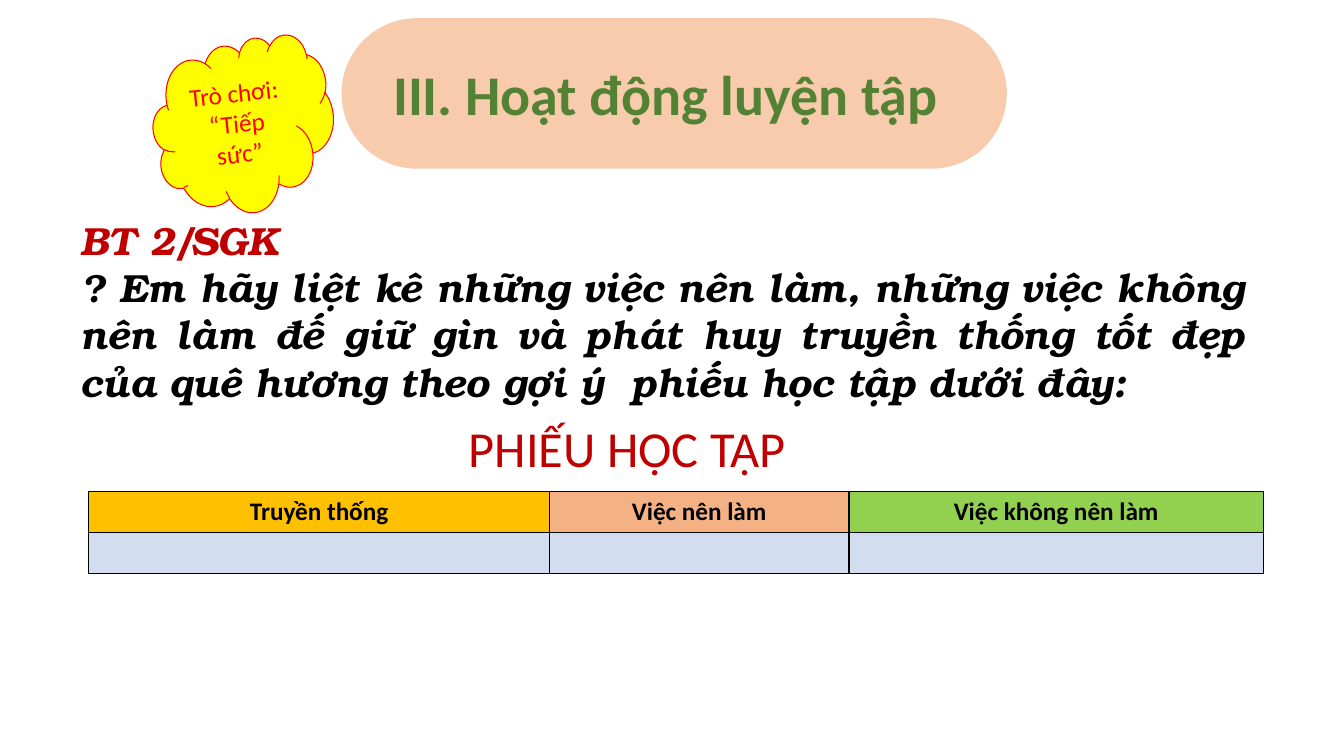
from lxml.etree import SubElement
from pptx import Presentation
from pptx.dml.color import RGBColor
from pptx.enum.shapes import MSO_SHAPE
from pptx.enum.text import MSO_ANCHOR, MSO_AUTO_SIZE, PP_ALIGN
from pptx.oxml.ns import qn
from pptx.util import Pt


def colour(code):
    return RGBColor.from_string(code)


class LessonPage:
    body_font = "Calibri"
    accent_font = "TeX Gyre Bonum"
    black = "000000"
    crimson = "C00000"

    def __init__(self, deck):
        self.page = deck.slides.add_slide(deck.slide_layouts[5])

    def format_para(self, para, size, code, align=PP_ALIGN.LEFT, font=body_font, bold=False, italic=False):
        para.alignment = align
        for span in para.runs:
            span.font.name = font
            span.font.size = Pt(size)
            span.font.color.rgb = colour(code)
            span.font.bold = bold
            span.font.italic = italic

    def title(self, text, left, top, width, height, size, code):
        box = self.page.shapes.title
        box.left, box.top, box.width, box.height = Pt(left), Pt(top), Pt(width), Pt(height)
        frame = box.text_frame
        frame.text = text
        frame.word_wrap = True
        frame.auto_size = MSO_AUTO_SIZE.NONE
        frame.vertical_anchor = MSO_ANCHOR.TOP
        self.format_para(frame.paragraphs[0], size, code, bold=True)

    def shape(self, kind, left, top, width, height, fill, line=None):
        box = self.page.shapes.add_shape(kind, Pt(left), Pt(top), Pt(width), Pt(height))
        box.shadow.inherit = False
        box.fill.solid()
        box.fill.fore_color.rgb = colour(fill)
        if line:
            box.line.color.rgb = colour(line)
            box.line.width = Pt(0)
        else:
            box.line.fill.background()
        return box

    def title_pill(self, left, top, width, height, fill):
        pill = self.shape(MSO_SHAPE.ROUNDED_RECTANGLE, left, top, width, height, fill)
        pill.adjustments[0] = 0.5
        self.page.shapes.title.element.addprevious(pill.element)

    def cloud(self, text, left, top, width, height, fill, code, rotation):
        cloud = self.shape(MSO_SHAPE.CLOUD, left, top, width, height, fill, code)
        cloud.rotation = rotation
        frame = cloud.text_frame
        frame.text = text
        frame.word_wrap = True
        frame.vertical_anchor = MSO_ANCHOR.MIDDLE
        self.format_para(frame.paragraphs[0], 18, code, PP_ALIGN.CENTER)

    def text(self, lines, left, top, width, height, size, **style):
        box = self.page.shapes.add_textbox(Pt(left), Pt(top), Pt(width), Pt(height))
        frame = box.text_frame
        frame.word_wrap = True
        frame.text = "\n".join(line for line, _, _ in lines)
        for para, (_, code, align) in zip(frame.paragraphs, lines):
            self.format_para(para, size, code, align, **style)

    def cell(self, cell, text, fill):
        cell.text = text
        para = cell.text_frame.paragraphs[0]
        para.font.size = Pt(18)
        self.format_para(para, 18, self.black, PP_ALIGN.CENTER, bold=True)
        properties = cell._tc.get_or_add_tcPr()
        for side in ("a:lnL", "a:lnR", "a:lnT", "a:lnB"):
            border = SubElement(properties, qn(side), w=str(Pt(1)))
            paint = SubElement(border, qn("a:solidFill"))
            SubElement(paint, qn("a:srgbClr"), val=self.black)
        cell.fill.solid()
        cell.fill.fore_color.rgb = colour(fill)

    def worksheet(self, columns, left, top, row_height, empty_fill):
        width = sum(column[2] for column in columns)
        table = self.page.shapes.add_table(
            2, len(columns), Pt(left), Pt(top), Pt(width), Pt(2 * row_height)
        ).table
        for index, (heading, fill, column_width) in enumerate(columns):
            table.columns[index].width = Pt(column_width)
            self.cell(table.cell(0, index), heading, fill)
            self.cell(table.cell(1, index), "", empty_fill)


def main():
    deck = Presentation()
    deck.slide_width, deck.slide_height = Pt(960), Pt(540)
    lesson = LessonPage(deck)
    lesson.title("III. Hoạt động luyện tập", 273.6, 39, 668, 55.5, 40, "548235")
    lesson.title_pill(244, 13, 475.2, 107.5, "F8CBAD")
    lesson.cloud("Trò chơi: “Tiếp sức”", 109.5, 28, 129, 124, "FFFF00", "FF0000", 354)
    lesson.worksheet(
        [
            ("Truyền thống", "FFC000", 329),
            ("Việc nên làm", "F4B183", 214),
            ("Việc không nên làm", "92D050", 296),
        ],
        63.5, 351.3, 29.3, "D2DEEF",
    )
    lesson.text(
        [
            ("BT 2/SGK", lesson.crimson, PP_ALIGN.LEFT),
            (
                "? Em hãy liệt kê những việc nên làm, những việc không nên làm đế giữ gìn "
                "và phát huy truyền thống tốt đẹp của quê hương theo gợi ý  phiếu học tập dưới đây:",
                lesson.black, PP_ALIGN.JUSTIFY,
            ),
        ],
        50.5, 151.2, 846, 143.3, 28, font=lesson.accent_font, bold=True, italic=True,
    )
    lesson.text(
        [("PHIẾU HỌC TẬP", lesson.crimson, PP_ALIGN.CENTER)], 226.8, 294.5, 442.8, 51, 36
    )
    deck.save("out.pptx")


if __name__ == "__main__":
    main()
